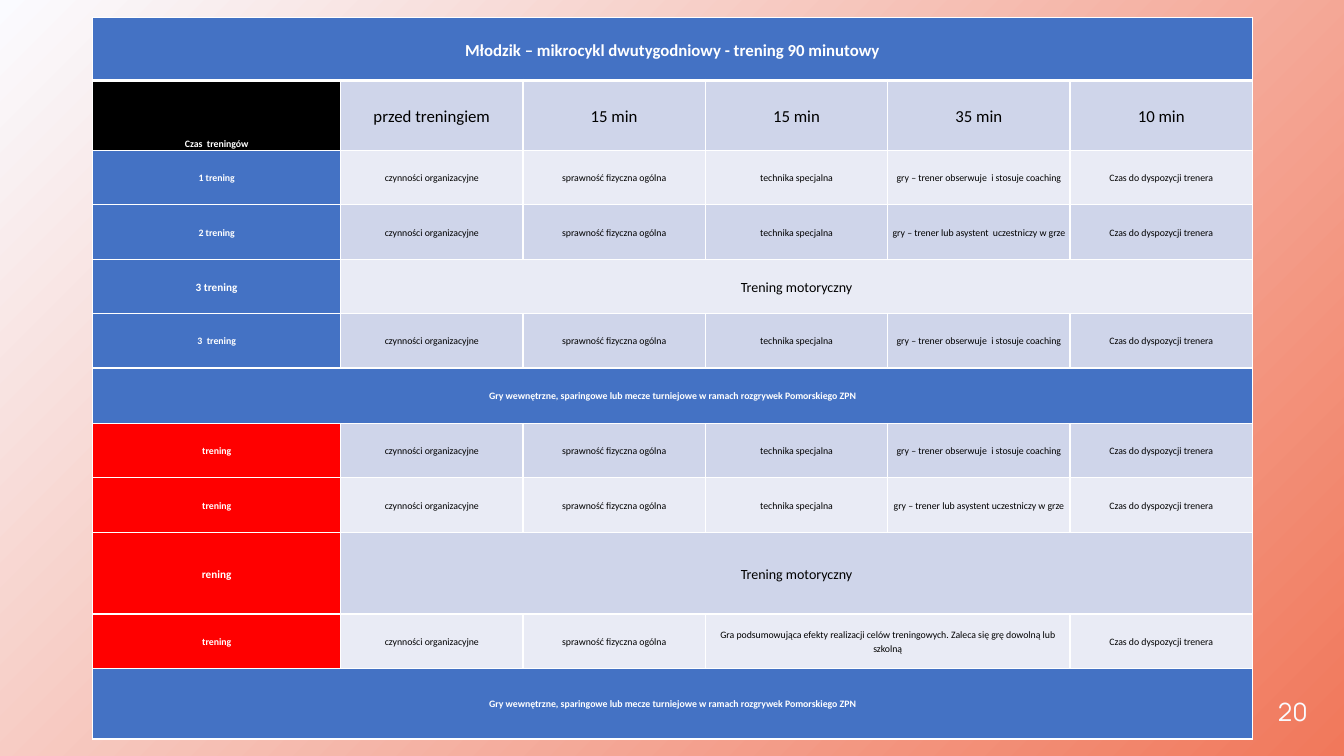
"""Builds the two-week training microcycle slide."""
from dataclasses import dataclass

from lxml.etree import SubElement
from pptx import Presentation
from pptx.dml.color import RGBColor as Color
from pptx.enum.text import MSO_ANCHOR as Anchor, PP_ALIGN as Align
from pptx.oxml.ns import qn
from pptx.util import Inches, Pt


@dataclass(frozen=True)
class Theme:
    font: str = "Calibri"
    number_font: str = "Manrope"
    white: str = "FFFFFF"
    black: str = "000000"
    blue: str = "4472C4"
    red: str = "FF0000"
    dark_band: str = "CFD5EA"
    light_band: str = "E9EBF5"
    pale: str = "FAFBFF"
    coral: str = "F1785B"
    heading: int = 12
    motor: int = 10
    motor_label: int = 8
    body: int = 7
    number: int = 18
    border: int = 1
    heavy_border: int = 3


@dataclass(frozen=True)
class Row:
    height: float
    label: str
    cells: tuple = ()
    fill: str = Theme.blue
    label_size: int = Theme.body
    size: int = Theme.body
    label_anchor: Anchor = Anchor.MIDDLE


THEME = Theme()
SLIDE_WIDTH, SLIDE_HEIGHT = Inches(13.33), Inches(7.5)
COLUMNS = (2.46,) + (1.81,) * 5
ROW = 0.54

COACHING = "gry – trener obserwuje  i stosuje coaching"
GAMES = "Gry wewnętrzne, sparingowe lub mecze turniejowe w ramach rozgrywek Pomorskiego ZPN"
SUMMARY = ("Gra podsumowująca efekty realizacji celów treningowych. "
           "Zaleca się grę dowolną lub szkolną")


def session(label, *main_part, fill=THEME.blue):
    """Return a training row whose main part varies."""
    cells = ("czynności organizacyjne", "sprawność fizyczna ogólna",
             *main_part, "Czas do dyspozycji trenera")
    return Row(ROW, label, cells, fill)


def motor_session(label, height=ROW, fill=THEME.blue):
    """Return a row with one motor training cell."""
    return Row(height, label, ("Trening motoryczny",), fill, THEME.motor_label, THEME.motor)


def technique(label, game, fill=THEME.blue):
    """Return a training row with technique followed by a game."""
    return session(label, "technika specjalna", game, fill=fill)


ROWS = (
    Row(0.63, "Młodzik – mikrocykl dwutygodniowy - trening 90 minutowy",
        label_size=THEME.heading),
    Row(0.69, "Czas  treningów", ("przed treningiem", "15 min", "15 min", "35 min", "10 min"),
        THEME.black, size=THEME.heading, label_anchor=Anchor.BOTTOM),
    technique("1 trening", COACHING),
    technique("2 trening", "gry – trener lub asystent  uczestniczy w grze"),
    motor_session("3 trening"),
    technique("3  trening", COACHING),
    Row(0.55, GAMES),
    technique("trening", COACHING, THEME.red),
    technique("trening", "gry – trener lub asystent uczestniczy w grze", THEME.red),
    motor_session("rening", 0.81, THEME.red),
    session("trening", SUMMARY, fill=THEME.red),
    Row(0.7, GAMES),
)


def area(left, top, width, height):
    """Turn percentages of the slide into lengths."""
    return (int(SLIDE_WIDTH * left / 100), int(SLIDE_HEIGHT * top / 100),
            int(SLIDE_WIDTH * width / 100), int(SLIDE_HEIGHT * height / 100))


def share(parts, tracks, total):
    """Divide a total length among tracks in proportion to parts."""
    return [(track, int(total * part / sum(parts))) for part, track in zip(parts, tracks)]


def write(frame, text, size, color, font=THEME.font, bold=False,
          align=Align.CENTER, spacing=None, after=None):
    """Write one formatted paragraph into a text frame."""
    para = frame.paragraphs[0]
    para.alignment, para.line_spacing = align, spacing
    if after is not None:
        para.space_after = Pt(after)
    span = para.add_run()
    span.text = text
    span.font.name, span.font.size, span.font.bold = font, Pt(size), bold
    span.font.color.rgb = Color.from_string(color)


def border(cell, top, bottom):
    """Draw white borders around a cell."""
    properties = cell._tc.get_or_add_tcPr()
    widths = {"L": THEME.border, "R": THEME.border, "T": top, "B": bottom}
    for side, width in widths.items():
        line = SubElement(properties, qn(f"a:ln{side}"), w=str(Pt(width)))
        SubElement(SubElement(line, qn("a:solidFill")), qn("a:srgbClr"), val=THEME.white)


def fill_cell(cell, text, fill, size, color, bold=False, anchor=Anchor.MIDDLE):
    """Fill a cell with a colour and centred text."""
    cell.fill.solid()
    cell.fill.fore_color.rgb = Color.from_string(fill)
    cell.vertical_anchor = anchor
    cell.margin_left = cell.margin_right = Inches(0.04)
    cell.margin_top = cell.margin_bottom = 0
    write(cell.text_frame, text, size, color, bold=bold, spacing=1.15, after=10)


def spans(row):
    """Return the column count of each cell after the label."""
    free = len(COLUMNS) - 1
    if len(row.cells) == 1:
        return (free,)
    return tuple(2 if text == SUMMARY else 1 for text in row.cells)


def merge(table, row, column, width):
    """Return a cell widened over the given number of columns."""
    cell = table.cell(row, column)
    if width > 1:
        cell.merge(table.cell(row, column + width - 1))
    return cell


def fill_row(table, index, row):
    """Fill a table row with its label and its cells."""
    for cell in table.rows[index].cells:
        border(cell, THEME.heavy_border if index == 1 else THEME.border,
               THEME.heavy_border if index == 0 else THEME.border)
    label = merge(table, index, 0, 1 if row.cells else len(COLUMNS))
    fill_cell(label, row.label, row.fill, row.label_size, THEME.white, True, row.label_anchor)
    band = THEME.dark_band if index % 2 else THEME.light_band
    column = 1
    for text, width in zip(row.cells, spans(row)):
        cell = merge(table, index, column, width)
        fill_cell(cell, text, band, row.size, THEME.black)
        column += width


def add_schedule(page):
    """Add the training schedule table."""
    place = area(6.9, 2.27, 86.3, 95.5)
    table = page.shapes.add_table(len(ROWS), len(COLUMNS), *place).table
    table.first_row = table.horz_banding = False
    for column, width in share(COLUMNS, table.columns, place[2]):
        column.width = width
    for track, height in share([row.height for row in ROWS], table.rows, place[3]):
        track.height = height
    for index, row in enumerate(ROWS):
        fill_row(table, index, row)


def add_page_number(page, number):
    """Add the page number at the lower right."""
    frame = page.shapes.add_textbox(*area(92.87, 92.13, 4.43, 4)).text_frame
    frame.word_wrap = True
    frame.margin_left = frame.margin_right = frame.margin_top = frame.margin_bottom = 0
    write(frame, number, THEME.number, THEME.pale, font=THEME.number_font, align=Align.RIGHT)


def paint_background(page):
    """Paint the diagonal background gradient."""
    fill = page.background.fill
    fill.gradient()
    fill.gradient_angle = 315
    for stop, color, position in zip(fill.gradient_stops, (THEME.pale, THEME.coral), (0, 1)):
        stop.color.rgb, stop.position = Color.from_string(color), position


def main():
    """Build and save the deck."""
    deck = Presentation()
    deck.slide_width, deck.slide_height = SLIDE_WIDTH, SLIDE_HEIGHT
    page = deck.slides.add_slide(deck.slide_layouts[6])
    paint_background(page)
    add_page_number(page, "20")
    add_schedule(page)
    deck.save("out.pptx")


if __name__ == "__main__":
    main()
